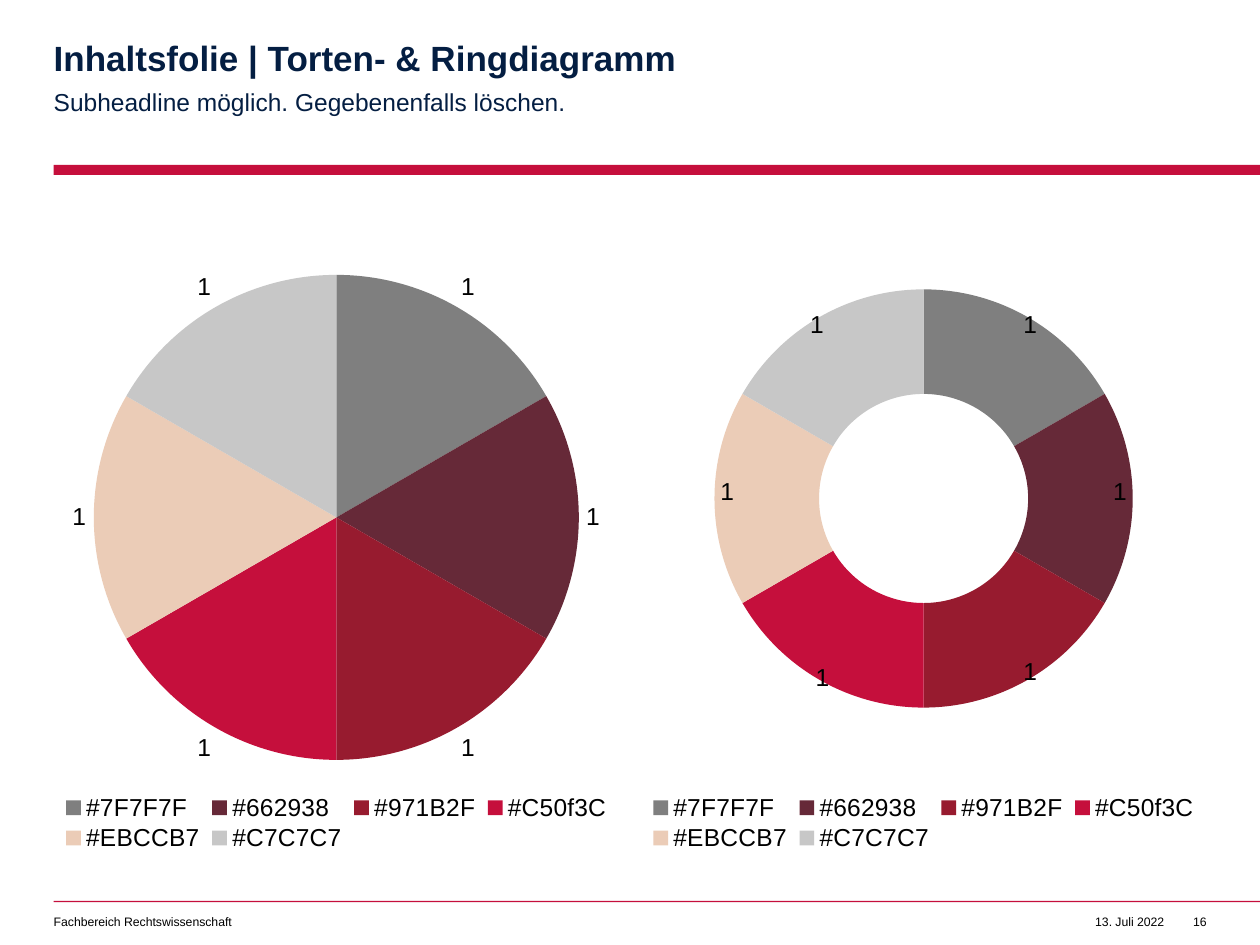
from copy import deepcopy

from lxml import etree
from pptx import Presentation
from pptx.chart.data import CategoryChartData
from pptx.dml.color import RGBColor
from pptx.enum.chart import XL_CHART_TYPE, XL_LABEL_POSITION, XL_LEGEND_POSITION
from pptx.enum.shapes import MSO_SHAPE
from pptx.enum.text import PP_ALIGN
from pptx.oxml.ns import qn
from pptx.util import Pt

RECT = MSO_SHAPE.RECTANGLE
PIE, DOUGHNUT = XL_CHART_TYPE.PIE, XL_CHART_TYPE.DOUGHNUT
OUTSIDE = XL_LABEL_POSITION.OUTSIDE_END
BOTTOM = XL_LEGEND_POSITION.BOTTOM
LEFT, RIGHT = PP_ALIGN.LEFT, PP_ALIGN.RIGHT

NAVY, RED, BLACK = "041E42", "C50F3C", "000000"
CATEGORIES = ["#7F7F7F", "#662938", "#971B2F", "#C50f3C", "#EBCCB7", "#C7C7C7"]
MARGIN, SLIDE_W, SLIDE_H = 30.7, 720, 540


def rgb(value):
    return RGBColor.from_string(value.upper())


def add_layout(parent, index, **values):
    """Insert a manual chart layout; values are fractions of the chart."""
    for old in parent.findall(qn("c:layout")):
        parent.remove(old)
    layout = etree.Element(qn("c:layout"))
    manual = etree.SubElement(layout, qn("c:manualLayout"))
    for tag, value in values.items():
        etree.SubElement(manual, qn("c:" + tag)).set("val", str(value))
    parent.insert(index, layout)


class Deck:
    font = "Arial"

    def __init__(self, prs):
        self.s = prs.slides.add_slide(prs.slide_layouts[6])

    def style(self, font, size, color=BLACK, bold=False):
        font.name, font.size, font.bold = self.font, Pt(size), bold
        font.color.rgb = rgb(color)

    def rect(self, x, y, w, h, color):
        sp = self.s.shapes.add_shape(RECT, Pt(x), Pt(y), Pt(w), Pt(h))
        sp.shadow.inherit = False
        sp.fill.solid()
        sp.fill.fore_color.rgb = rgb(color)
        sp.line.fill.background()

    def text(self, x, y, w, h, text, size, color=BLACK, bold=False,
             align=LEFT, spacing=1.0, wrap=True):
        tf = self.s.shapes.add_textbox(Pt(x), Pt(y), Pt(w), Pt(h)).text_frame
        tf.margin_left = tf.margin_right = tf.margin_top = tf.margin_bottom = 0
        tf.word_wrap = wrap
        p = tf.paragraphs[0]
        p.text, p.alignment, p.line_spacing = text, align, spacing
        self.style(p.font, size, color, bold)

    def chart(self, kind, box, plot_box):
        data = CategoryChartData()
        data.categories = CATEGORIES
        data.add_series("Series 1", [1] * len(CATEGORIES))
        chart = self.s.shapes.add_chart(kind, *map(Pt, box), data).chart
        self.style(chart.font, 10)
        chart.has_title = False
        chart.plots[0].vary_by_categories = True

        # Legend over the full width, in two rows
        chart.has_legend = True
        chart.legend.position = BOTTOM
        chart.legend.include_in_layout = False
        self.style(chart.legend.font, 14)
        root = chart.element
        add_layout(root.find(".//" + qn("c:legend")), 1, xMode="edge", yMode="edge",
                   x=0, y=0.9, w=1, h=0.1)

        # Fixed plot area
        x, y, w, h = plot_box
        add_layout(root.find(".//" + qn("c:plotArea")), 0, layoutTarget="inner",
                   xMode="edge", yMode="edge", x=x, y=y, w=w, h=h)

        # Slices and value labels
        series = chart.plots[0].series[0]
        for i, name in enumerate(CATEGORIES):
            fmt = series.points[i].format
            fmt.fill.solid()
            fmt.fill.fore_color.rgb = rgb(name.lstrip("#"))
            fmt.line.fill.background()
        labels = series.data_labels
        labels.show_value = True
        self.style(labels.font, 14)
        return chart

    def pie(self, box, plot_box):
        chart = self.chart(PIE, box, plot_box)
        chart.plots[0].series[0].data_labels.position = OUTSIDE

    def doughnut(self, box, plot_box, hole, label_shifts):
        root = self.chart(DOUGHNUT, box, plot_box).element
        root.find(".//" + qn("c:holeSize")).set("val", str(hole))

        # Labels moved towards the outer edge of the ring
        labels = root.find(".//" + qn("c:ser")).find(qn("c:dLbls"))
        text_style = labels.find(qn("c:txPr"))
        for i, (dx, dy) in enumerate(label_shifts):
            label = etree.Element(qn("c:dLbl"))
            etree.SubElement(label, qn("c:idx")).set("val", str(i))
            add_layout(label, 1, x=dx, y=dy)
            label.append(deepcopy(text_style))
            for tag in ("LegendKey", "Val", "CatName", "SerName", "Percent", "BubbleSize"):
                etree.SubElement(label, qn("c:show" + tag)).set("val", str(int(tag == "Val")))
            labels.insert(i, label)


def main():
    prs = Presentation()
    prs.slide_width, prs.slide_height = Pt(SLIDE_W), Pt(SLIDE_H)
    d = Deck(prs)

    # Rules
    d.rect(MARGIN, 94.3, SLIDE_W - MARGIN, 5.6, RED)
    d.rect(MARGIN, 514.8, SLIDE_W - MARGIN, 0.8, RED)

    # Headings
    d.text(MARGIN, 23.5, 404, 21.6, "Inhaltsfolie | Torten- & Ringdiagramm",
           20, NAVY, bold=True, spacing=0.9)
    d.text(MARGIN, 48, 404, 17, "Subheadline möglich. Gegebenenfalls löschen.",
           14, NAVY, spacing=1.1)

    # Charts
    chart_y, chart_w, chart_h = 128.3, 323, 360
    d.pie((MARGIN, chart_y, chart_w, chart_h), plot_box=(0.07, 0.08, 0.86, 0.77))
    d.doughnut((SLIDE_W - MARGIN - chart_w, chart_y, chart_w, chart_h),
               plot_box=(0.13, 0.1, 0.74, 0.67), hole=80,
               label_shifts=[(0.05, -0.06), (0.07, -0.01), (0.05, 0.06),
                             (-0.04, 0.07), (-0.07, -0.01), (-0.05, -0.06)])

    # Footer
    d.text(MARGIN, 522.6, 323, 8.6, "Fachbereich Rechtswissenschaft", 7)
    d.text(614.3, 522.6, 51, 8.6, "13. Juli 2022", 7, align=RIGHT, wrap=False)
    d.text(677.5, 522.6, 12, 8.6, "16", 7, align=RIGHT, wrap=False)

    prs.save("out.pptx")


if __name__ == "__main__":
    main()
